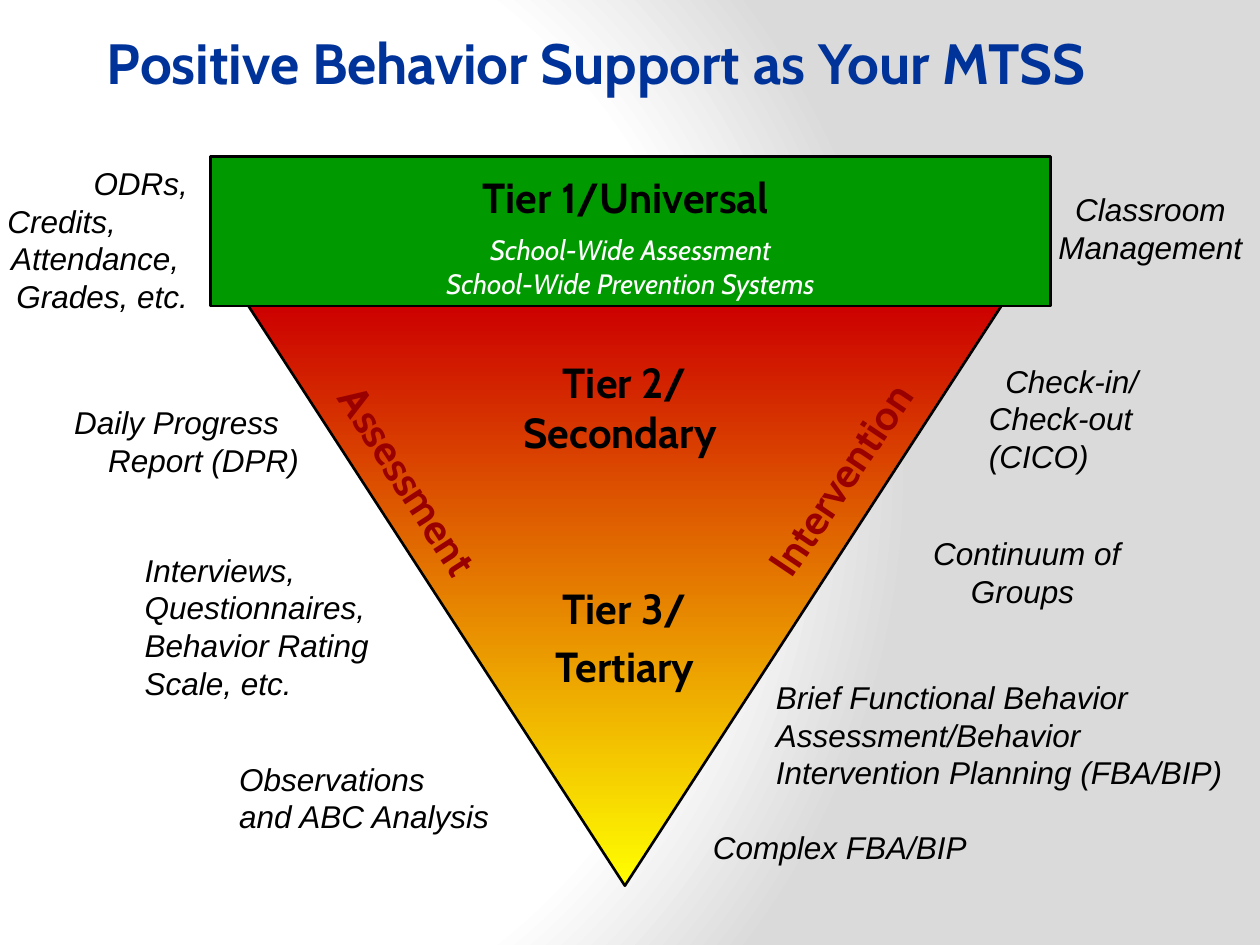
from dataclasses import dataclass

from pptx import Presentation
from pptx.dml.color import RGBColor
from pptx.enum.shapes import MSO_SHAPE
from pptx.enum.text import MSO_ANCHOR, PP_ALIGN
from pptx.oxml import parse_xml
from pptx.oxml.ns import nsdecls
from pptx.util import Inches, Pt

LEFT, CENTER, RIGHT = PP_ALIGN.LEFT, PP_ALIGN.CENTER, PP_ALIGN.RIGHT


@dataclass(frozen=True)
class Style:
    name: str
    size: float
    color: str
    bold: bool = False
    italic: bool = False


@dataclass(frozen=True)
class Theme:
    black: str = "000000"
    green: str = "009900"
    yellow: str = "FFFF00"
    red: str = "CC0000"
    white: str = "FFFFFF"
    gray: str = "DADADA"
    outline: float = 1.5
    title: Style = Style("Cabin", 32.4, "003399", bold=True)
    tier: Style = Style("Cabin", 24, "000000", bold=True)
    side: Style = Style("Cabin", 24, "990000", bold=True)
    detail: Style = Style("Cabin", 16, "FFFFFF", italic=True)
    note: Style = Style("Arial", 18, "000000", italic=True)


THEME = Theme()


@dataclass(frozen=True)
class Line:
    text: str
    align: PP_ALIGN = LEFT
    indent: float = 0
    before: float = 0
    style: Style = THEME.note


@dataclass(frozen=True)
class Label:
    left: float
    top: float
    width: float
    height: float
    lines: tuple
    rotation: float = 0


def make_lines(*texts: str, align: PP_ALIGN = LEFT, style: Style = THEME.note) -> tuple:
    return tuple(Line(text, align, style=style) for text in texts)


TITLE = Label(0.75, 0.17, 9.08, 1,
              make_lines("Positive Behavior Support as Your MTSS", style=THEME.title))

UNIVERSAL_LINES = (
    Line("Tier 1/Universal ", CENTER, style=THEME.tier),
    Line("School-Wide Assessment", CENTER, before=6, style=THEME.detail),
    Line("School-Wide Prevention Systems", CENTER, style=THEME.detail),
)

LOWER_TIERS = Label(3.71, 2.78, 2.5, 2.58, (
    Line("Tier 2/", CENTER, style=THEME.tier),
    Line("Secondary ", CENTER, style=THEME.tier),
    Line("Tier 3/", CENTER, before=71.5, style=THEME.tier),
    Line("Tertiary", CENTER, before=4.6, style=THEME.tier),
))

SIDES = (
    Label(2.08, 3.56, 2.33, 0.5, make_lines("Assessment", align=CENTER, style=THEME.side), 57.2),
    Label(5.5, 3.55, 2.33, 0.5, make_lines("Intervention", align=CENTER, style=THEME.side), 303.9),
)

ASSESSMENT_NOTES = (
    Label(-0.53, 1.25, 2.12, 1.31, (
        Line("ODRs,", RIGHT),
        Line("Credits,", indent=0.49),
        Line("Attendance,", indent=0.52),
        Line("Grades, etc.", RIGHT),
    )),
    Label(0.49, 3.15, 2.08, 0.71, (
        Line("Daily Progress"), Line("Report (DPR)", indent=0.27))),
    Label(1.05, 4.32, 2.23, 1.31,
          make_lines("Interviews,", "Questionnaires,", "Behavior Rating", "Scale, etc.")),
    Label(1.8, 5.98, 2.67, 0.71, make_lines("Observations", "and ABC Analysis")),
)

INTERVENTION_NOTES = (
    Label(8.28, 1.46, 1.7, 0.71, make_lines("Classroom", "Management", align=CENTER)),
    Label(7.75, 2.82, 1.82, 1.01, (
        Line("Check-in/", indent=0.13), Line("Check-out"), Line("(CICO)"))),
    Label(6.75, 4.19, 2.8, 0.71, make_lines("Continuum of", "Groups ", align=CENTER)),
    Label(6.06, 5.33, 3.9, 1.01, make_lines(
        "Brief Functional Behavior", "Assessment/Behavior", "Intervention Planning (FBA/BIP)")),
    Label(5.56, 6.52, 2.3, 0.4, make_lines("Complex FBA/BIP")),
)


def write_lines(shape, lines: tuple, anchor=MSO_ANCHOR.TOP) -> None:
    frame = shape.text_frame
    frame.word_wrap = True
    frame.vertical_anchor = anchor
    for index, line in enumerate(lines):
        paragraph = frame.add_paragraph() if index else frame.paragraphs[0]
        paragraph.alignment = line.align
        paragraph.space_before = Pt(line.before)
        if line.indent:
            properties = paragraph._p.get_or_add_pPr()
            properties.set("marL", str(Inches(line.indent)))
            properties.set("indent", "0")
        run = paragraph.add_run()
        run.text = line.text
        style = line.style
        formats = {"name": style.name, "size": Pt(style.size),
                   "bold": style.bold, "italic": style.italic}
        for attribute, value in formats.items():
            setattr(run.font, attribute, value)
        run.font.color.rgb = RGBColor.from_string(style.color)


def add_label(slide, label: Label) -> None:
    shape = slide.shapes.add_textbox(Inches(label.left), Inches(label.top),
                                     Inches(label.width), Inches(label.height))
    shape.rotation = label.rotation
    write_lines(shape, label.lines)


def add_outlined(slide, kind, left: float, top: float, width: float, height: float):
    shape = slide.shapes.add_shape(kind, Inches(left), Inches(top), Inches(width), Inches(height))
    shape.shadow.inherit = False
    shape.line.color.rgb = RGBColor.from_string(THEME.black)
    shape.line.width = Pt(THEME.outline)
    return shape


def paint_background(slide) -> None:
    fill = slide.background.fill
    fill.solid()
    solid = slide._element.cSld.bg.bgPr[0]
    stops = "".join(
        f'<a:gs pos="{position * 1000}"><a:srgbClr val="{color}"/></a:gs>'
        for position, color in ((0, THEME.white), (75, THEME.white), (100, THEME.gray)))
    gradient = parse_xml(
        f'<a:gradFill {nsdecls("a")} rotWithShape="1"><a:gsLst>{stops}</a:gsLst>'
        '<a:path path="circle"><a:fillToRect l="20000" t="50000" r="100000" b="50000"/>'
        '</a:path></a:gradFill>')
    solid.getparent().replace(solid, gradient)


def main() -> None:
    presentation = Presentation()
    presentation.slide_width, presentation.slide_height = Inches(10), Inches(7.5)
    slide = presentation.slides.add_slide(presentation.slide_layouts[6])
    paint_background(slide)

    # Inverted triangle for the lower tiers, yellow at its tip
    triangle = add_outlined(slide, MSO_SHAPE.ISOSCELES_TRIANGLE, 1.96, 2.41, 6, 4.62)
    triangle._element.spPr.xfrm.set("flipV", "1")
    triangle.fill.gradient()
    triangle.fill.gradient_angle = 270
    for stop, color in zip(triangle.fill.gradient_stops, (THEME.yellow, THEME.red)):
        stop.color.rgb = RGBColor.from_string(color)

    # Universal tier bar
    bar = add_outlined(slide, MSO_SHAPE.RECTANGLE, 1.67, 1.24, 6.67, 1.19)
    bar.fill.solid()
    bar.fill.fore_color.rgb = RGBColor.from_string(THEME.green)
    write_lines(bar, UNIVERSAL_LINES, MSO_ANCHOR.BOTTOM)

    # Title, tier names, side captions and notes
    for label in (TITLE, LOWER_TIERS, *SIDES, *ASSESSMENT_NOTES, *INTERVENTION_NOTES):
        add_label(slide, label)

    presentation.save("out.pptx")


if __name__ == "__main__":
    main()
